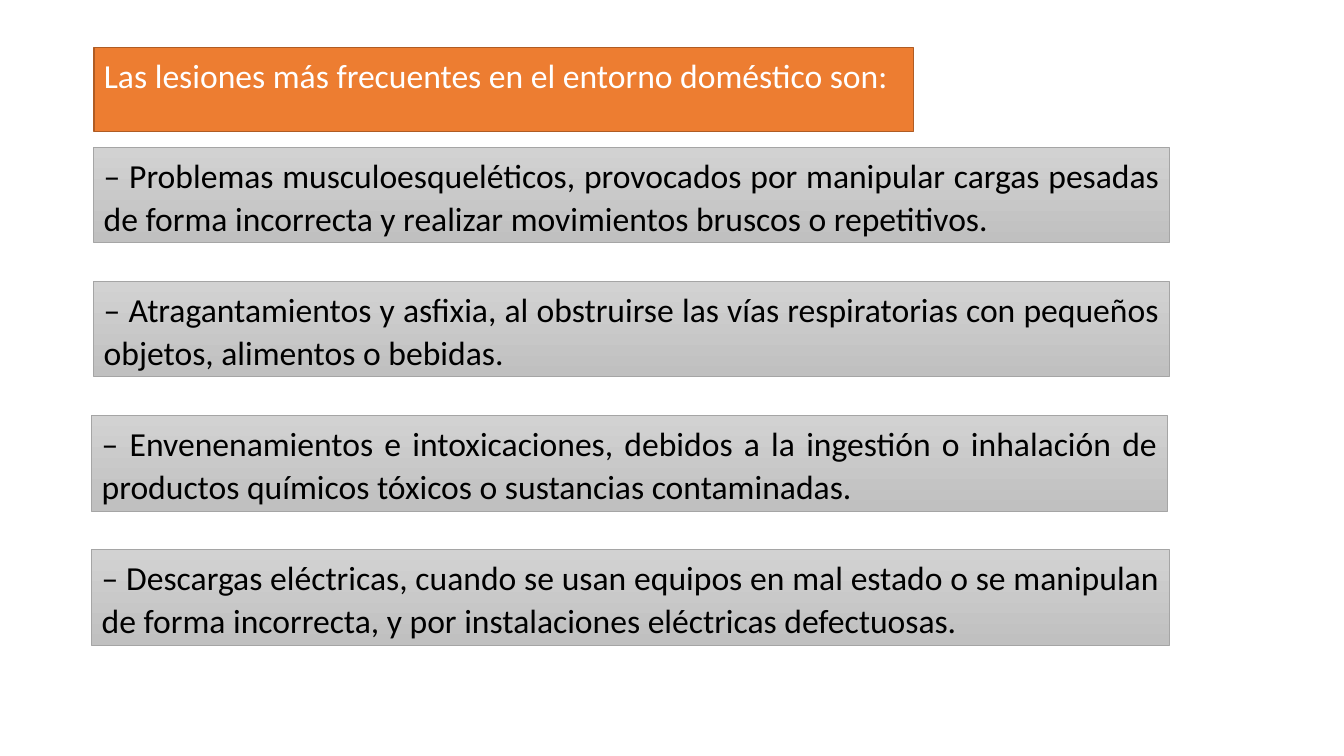
from dataclasses import dataclass

from pptx import Presentation
from pptx.dml.color import RGBColor
from pptx.enum.shapes import MSO_SHAPE as Preset
from pptx.enum.text import MSO_ANCHOR as Anchor, MSO_AUTO_SIZE as AutoSize, PP_ALIGN as Align
from pptx.util import Pt

TITLE = "Las lesiones más frecuentes en el entorno doméstico son:"
FIRST_TOP, STEP, INJURY_HEIGHT = 105.0, 95.8, 68.4

FRAME_FORMAT = {
    "word_wrap": True,
    "auto_size": AutoSize.SHAPE_TO_FIT_TEXT,
    "vertical_anchor": Anchor.TOP,
    "margin_left": Pt(7.2),
    "margin_right": Pt(7.2),
    "margin_top": Pt(3.6),
    "margin_bottom": Pt(3.6),
}
PARA_FORMAT = {
    "alignment": Align.JUSTIFY,
    "line_spacing": 1.07,
    "space_before": Pt(0),
    "space_after": Pt(0),
}
FONT_FORMAT = {"name": "Calibri", "size": Pt(24), "bold": False}


@dataclass
class Injury:
    text: str
    left: float
    width: float


INJURIES = [
    Injury("– Problemas musculoesqueléticos, provocados por manipular cargas pesadas "
           "de forma incorrecta y realizar movimientos bruscos o repetitivos.", 67, 768.2),
    Injury("– Atragantamientos y asfixia, al obstruirse las vías respiratorias con "
           "pequeños objetos, alimentos o bebidas.", 67, 768.2),
    Injury("– Envenenamientos e intoxicaciones, debidos a la ingestión o inhalación de "
           "productos químicos tóxicos o sustancias contaminadas.", 65.6, 768.2),
    Injury("– Descargas eléctricas, cuando se usan equipos en mal estado o se manipulan "
           "de forma incorrecta, y por instalaciones eléctricas defectuosas.", 65.6, 769.6),
]


def color(hex_code: str) -> RGBColor:
    return RGBColor.from_string(hex_code)


def apply(target, values: dict) -> None:
    for name, value in values.items():
        setattr(target, name, value)


def write(box, text: str, text_color: str) -> None:
    frame = box.text_frame
    frame.text = text
    apply(frame, FRAME_FORMAT)
    para = frame.paragraphs[0]
    apply(para, PARA_FORMAT)
    span = para.runs[0]
    apply(span.font, FONT_FORMAT)
    span.font.color.rgb = color(text_color)


def outline(box, line_color: str, width: float) -> None:
    box.line.color.rgb = color(line_color)
    box.line.width = Pt(width)


def add_title(page) -> None:
    box = page.shapes.title
    apply(box, {"left": Pt(67), "top": Pt(33.8), "width": Pt(585.4), "height": Pt(36.7)})
    box.fill.solid()
    box.fill.fore_color.rgb = color("ED7D31")
    outline(box, "AF5C24", 1)
    write(box, TITLE, "FFFFFF")


def add_injury(page, injury: Injury, top: float) -> None:
    box = page.shapes.add_shape(Preset.RECTANGLE, Pt(injury.left), Pt(top),
                                Pt(injury.width), Pt(INJURY_HEIGHT))
    box.shadow.inherit = False
    # Grey gradient running from top to bottom
    box.fill.gradient()
    box.fill.gradient_angle = 270
    for stop, shade in zip(box.fill.gradient_stops, ("D2D2D2", "C0C0C0")):
        stop.color.rgb = color(shade)
    outline(box, "A5A5A5", 0.5)
    write(box, injury.text, "000000")


def main() -> None:
    deck = Presentation()
    deck.slide_width, deck.slide_height = Pt(960), Pt(540)
    page = deck.slides.add_slide(deck.slide_layouts.get_by_name("Title Only"))

    # Heading
    add_title(page)

    # Evenly spaced list of injuries
    for row, injury in enumerate(INJURIES):
        add_injury(page, injury, FIRST_TOP + row * STEP)

    deck.save("out.pptx")


if __name__ == "__main__":
    main()
